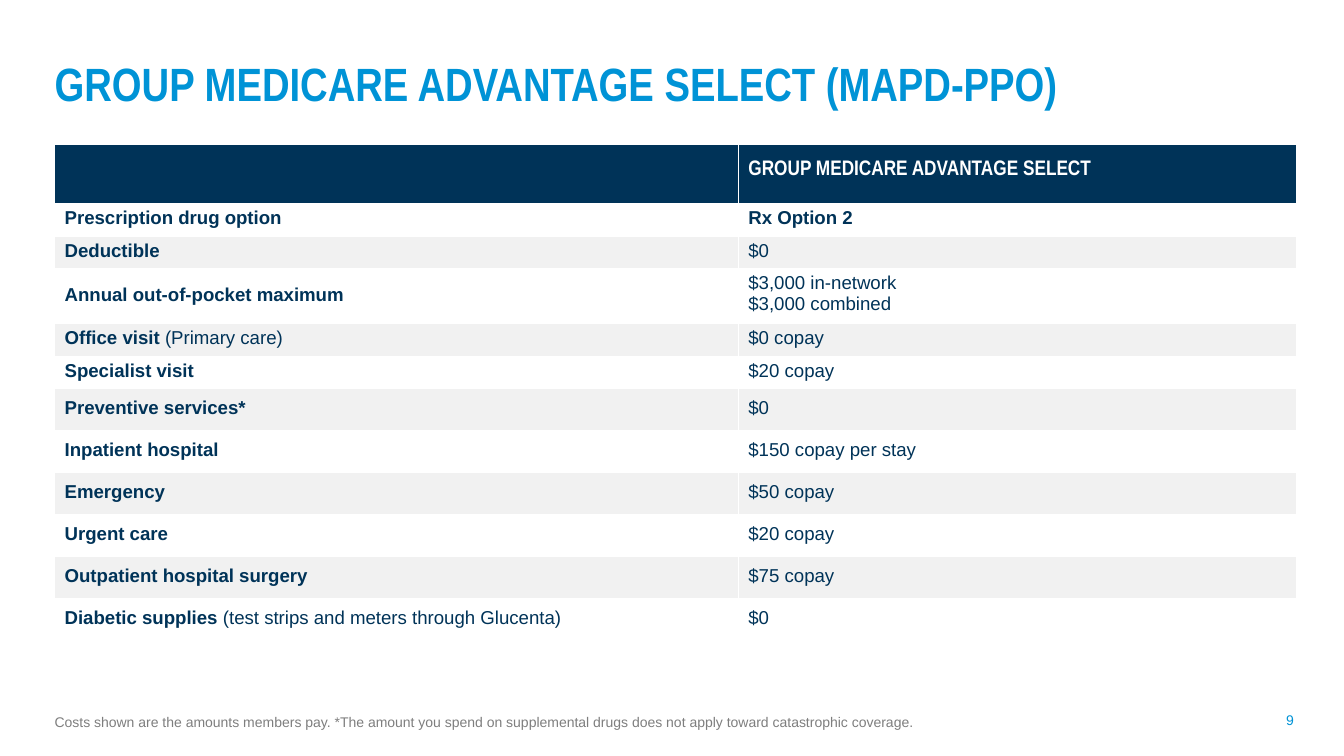
import pptx
import pptx.dml.color
import pptx.enum.text
import pptx.oxml
import pptx.oxml.ns
import pptx.util
from pptx.util import Inches, Pt

TITLE = "GROUP MEDICARE ADVANTAGE SELECT (MAPD-PPO)"
HEADER = "GROUP MEDICARE ADVANTAGE SELECT"
FOOTNOTE = ("Costs shown are the amounts members pay. *The amount you spend on "
            "supplemental drugs does not apply toward catastrophic coverage.")
PAGE_NUMBER = "9"

# Benefit, detail in regular weight, cost lines
BENEFITS = [
    ("Prescription drug option", "", ["Rx Option 2"]),
    ("Deductible", "", ["$0"]),
    ("Annual out-of-pocket maximum", "", ["$3,000 in-network", "$3,000 combined"]),
    ("Office visit", " (Primary care)", ["$0 copay"]),
    ("Specialist visit", "", ["$20 copay"]),
    ("Preventive services*", "", ["$0"]),
    ("Inpatient hospital", "", ["$150 copay per stay"]),
    ("Emergency", "", ["$50 copay"]),
    ("Urgent care", "", ["$20 copay"]),
    ("Outpatient hospital surgery", "", ["$75 copay"]),
    ("Diabetic supplies", " (test strips and meters through Glucenta)", ["$0"]),
]
COLUMN_WIDTHS = [8.14, 6.65]
HEADER_HEIGHT, COMPACT_HEIGHT, DOUBLE_HEIGHT, TALL_HEIGHT = 0.7, 0.39, 0.65, 0.5
COMPACT_ROWS = 5
BLUE, NAVY, GRAY, BAND, WHITE = "0093D6", "003358", "7E7E7E", "F1F1F1", "FFFFFF"


def color(hex_value):
    return pptx.dml.color.RGBColor.from_string(hex_value)


def format_font(font, name, size, hex_value, bold=False):
    font.name, font.size, font.bold = name, Pt(size), bold
    font.color.rgb = color(hex_value)


def format_frame(frame, top):
    frame.margin_left = frame.margin_right = frame.margin_bottom = 0
    frame.margin_top = Inches(top)
    frame.vertical_anchor = pptx.enum.text.MSO_ANCHOR.TOP
    frame.auto_size = pptx.enum.text.MSO_AUTO_SIZE.NONE


def add_text(slide, text, left, top, width, hex_value):
    box = slide.shapes.add_textbox(Inches(left), Inches(top), Inches(width), Inches(0.23))
    format_frame(box.text_frame, 0.01)
    box.text_frame.word_wrap = True
    paragraph = box.text_frame.paragraphs[0]
    paragraph.text = text
    format_font(paragraph.font, "Arial", 12, hex_value)


def format_cell(cell, fill, top):
    cell.margin_left, cell.margin_top = Inches(0.12), Inches(top)
    cell.margin_right = cell.margin_bottom = 0
    cell.vertical_anchor = pptx.enum.text.MSO_ANCHOR.TOP
    properties = cell._tc.get_or_add_tcPr()
    for side in ("lnL", "lnR", "lnT", "lnB"):
        properties.append(pptx.oxml.parse_xml(
            f'<a:{side} {pptx.oxml.ns.nsdecls("a")} w="12700"><a:solidFill>'
            f'<a:srgbClr val="{WHITE}"/></a:solidFill></a:{side}>'))
    cell.fill.solid()
    cell.fill.fore_color.rgb = color(fill)


def add_benefit_table(slide):
    heights = [HEADER_HEIGHT]
    for index, (_, _, costs) in enumerate(BENEFITS):
        single = COMPACT_HEIGHT if index < COMPACT_ROWS else TALL_HEIGHT
        heights.append(DOUBLE_HEIGHT if len(costs) > 1 else single)
    table = slide.shapes.add_table(
        len(heights), len(COLUMN_WIDTHS), Inches(0.65), Inches(1.72),
        Inches(sum(COLUMN_WIDTHS)), Inches(sum(heights))).table
    table.first_row = table.horz_banding = False
    for column, width in zip(table.columns, COLUMN_WIDTHS):
        column.width = Inches(width)
    for row, height in zip(table.rows, heights):
        row.height = Inches(height)

    # Header row
    for cell in table.rows[0].cells:
        format_cell(cell, NAVY, 0.19)
    paragraph = table.cell(0, 1).text_frame.paragraphs[0]
    paragraph.text = HEADER
    format_font(paragraph.font, "Arial Narrow", 18, WHITE, True)

    # Benefit rows
    for index, (benefit, detail, costs) in enumerate(BENEFITS):
        label_cell, cost_cell = table.rows[index + 1].cells
        top = 0.05 if index < COMPACT_ROWS else 0.11
        fill = BAND if index % 2 else WHITE
        format_cell(label_cell, fill, 0.19 if len(costs) > 1 else top)
        format_cell(cost_cell, fill, top)
        paragraph = label_cell.text_frame.paragraphs[0]
        for text, bold in ((benefit, True), (detail, False)):
            if text:
                run = paragraph.add_run()
                run.text = text
                format_font(run.font, "Arial", 16, NAVY, bold)
        cost_cell.text_frame.text = "\n".join(costs)
        for paragraph in cost_cell.text_frame.paragraphs:
            format_font(paragraph.font, "Arial", 16, NAVY, index == 0)


def main():
    presentation = pptx.Presentation()
    presentation.slide_width, presentation.slide_height = Inches(16), Inches(9)
    slide = presentation.slides.add_slide(presentation.slide_layouts[5])

    # Title
    title = slide.shapes.title
    title.left, title.top = Inches(0.61), Inches(0.38)
    title.width, title.height = Inches(14.78), Inches(1.18)
    format_frame(title.text_frame, 0.27)
    title.text_frame.margin_left = Inches(0.04)
    paragraph = title.text_frame.paragraphs[0]
    paragraph.text = TITLE
    paragraph.alignment = pptx.enum.text.PP_ALIGN.LEFT
    format_font(paragraph.font, "Arial Narrow", 40, BLUE, True)

    # Table, footnote and page number
    add_benefit_table(slide)
    add_text(slide, FOOTNOTE, 0.65, 8.48, 10.5, GRAY)
    add_text(slide, PAGE_NUMBER, 15.31, 8.46, 0.12, BLUE)

    presentation.save("out.pptx")


if __name__ == "__main__":
    main()
